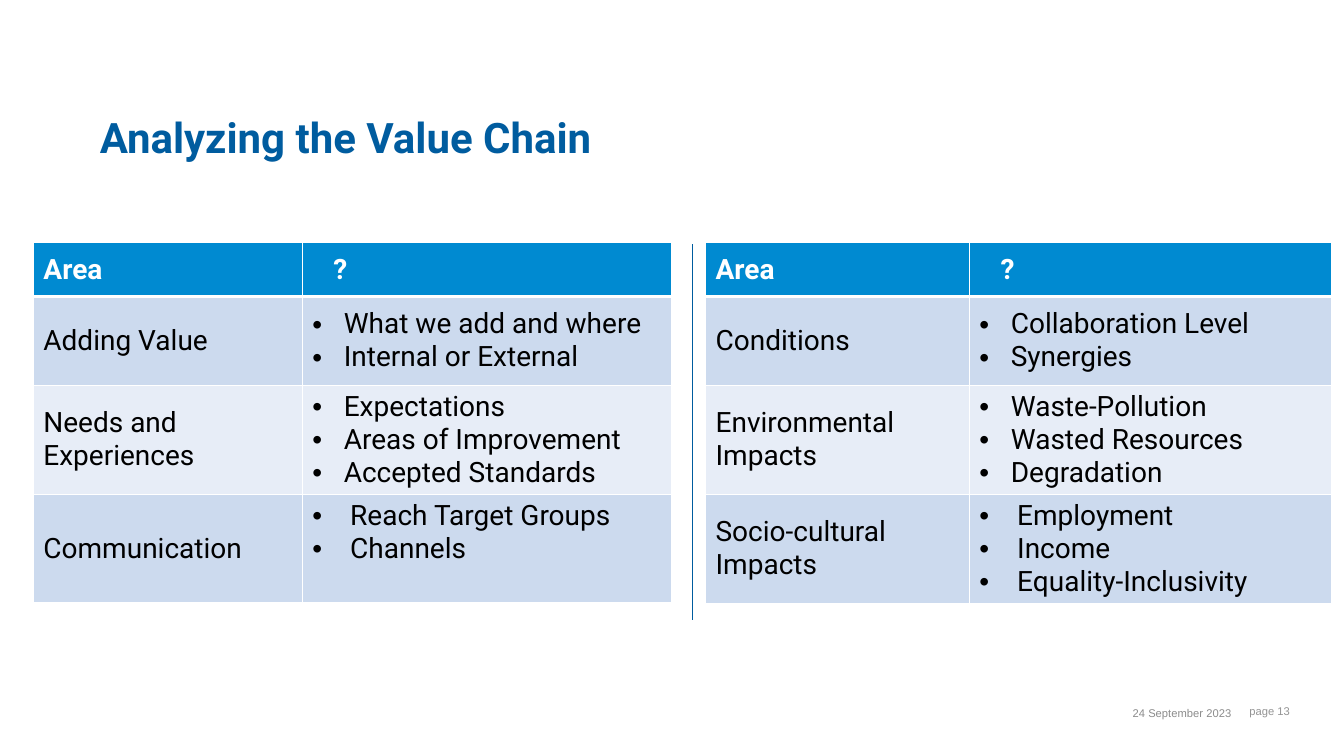
from dataclasses import dataclass

from lxml import etree
from pptx import Presentation
from pptx.dml.color import RGBColor
from pptx.enum.shapes import MSO_CONNECTOR
from pptx.enum.text import MSO_ANCHOR, MSO_AUTO_SIZE, PP_ALIGN
from pptx.oxml.ns import qn
from pptx.util import Cm, Pt

STRAIGHT = MSO_CONNECTOR.STRAIGHT
TOP, MIDDLE = MSO_ANCHOR.TOP, MSO_ANCHOR.MIDDLE
LEFT, CENTER, RIGHT = PP_ALIGN.LEFT, PP_ALIGN.CENTER, PP_ALIGN.RIGHT
NO_AUTOFIT = MSO_AUTO_SIZE.NONE

TITLE_ONLY = 5
NAVY, BLUE, WHITE, BLACK = "005C9F", "008AD1", "FFFFFF", "000000"
BANDS = ("CCDAEE", "E7EDF7")
TABLE_TOP = 6.12
ROW_HEIGHTS = (1.35, 2.24, 2.74, 2.74)
QUESTION_INDENT = 0.53

TITLE_FORMAT = {"name": "Roboto", "size": Pt(30), "bold": True, "color": NAVY}
HEADER_FORMAT = {"name": "Roboto", "size": Pt(20), "bold": True, "color": WHITE}
BODY_FORMAT = {**HEADER_FORMAT, "bold": False, "color": BLACK}
DATE_FORMAT = {"name": "Arial", "size": Pt(8), "bold": False, "color": "8C8C8C"}
PAGE_FORMAT = {**DATE_FORMAT, "color": "949494"}


@dataclass
class AreaRow:
    area: str
    points: list[str]
    indent: float = 0.79
    anchor: MSO_ANCHOR = MIDDLE


@dataclass
class AreaTable:
    left: float
    column_widths: tuple[float, float]
    rows: list[AreaRow]


@dataclass
class FooterText:
    text: str
    box: tuple[float, float, float, float]
    alignment: PP_ALIGN
    text_format: dict


AREA_TABLES = [
    AreaTable(0.84, (6.78, 9.3), [
        AreaRow("Adding Value", ["What we add and where", "Internal or External"]),
        AreaRow("Needs and Experiences",
                ["Expectations", "Areas of Improvement", "Accepted Standards"]),
        AreaRow("Communication", ["Reach Target Groups", "Channels"], 0.95, TOP),
    ]),
    AreaTable(17.78, (6.65, 9.12), [
        AreaRow("Conditions", ["Collaboration Level", "Synergies"]),
        AreaRow("Environmental Impacts",
                ["Waste-Pollution", "Wasted Resources", "Degradation"]),
        AreaRow("Socio-cultural Impacts",
                ["Employment", "Income", "Equality-Inclusivity"], 0.95),
    ]),
]
FOOTERS = [
    FooterText("24 September 2023", (28.04, 17.45, 3.5, 1.02), CENTER, DATE_FORMAT),
    FooterText("page 13", (29.97, 17.4, 2.79, 1.02), RIGHT, PAGE_FORMAT),
]


def color(hex_value: str) -> RGBColor:
    return RGBColor.from_string(hex_value)


def write_run(paragraph, text: str, text_format: dict) -> None:
    font = paragraph.add_run().font
    paragraph.runs[0].text = text
    for attribute, value in text_format.items():
        if attribute == "color":
            font.color.rgb = color(value)
        else:
            setattr(font, attribute, value)


def indent_paragraph(paragraph, indent: float, bullet: bool) -> None:
    properties = paragraph._p.get_or_add_pPr()
    properties.set("marL", str(Cm(indent)))
    properties.set("indent", str(-Cm(indent) if bullet else 0))
    if bullet:
        etree.SubElement(properties, qn("a:buFont")).set("typeface", "Arial")
        etree.SubElement(properties, qn("a:buChar")).set("char", "•")


def add_borders(cell, top: float, bottom: float) -> None:
    properties = cell._tc.get_or_add_tcPr()
    for side, width in {"L": 1, "R": 1, "T": top, "B": bottom}.items():
        line = etree.SubElement(properties, qn(f"a:ln{side}"), w=str(Pt(width)))
        fill = etree.SubElement(line, qn("a:solidFill"))
        etree.SubElement(fill, qn("a:srgbClr"), val=WHITE)


def fill_cell(cell, lines: list[str], text_format: dict, fill: str,
              indent: float = 0, bullet: bool = False, anchor=MIDDLE) -> None:
    cell.fill.solid()
    cell.fill.fore_color.rgb = color(fill)
    cell.vertical_anchor = anchor
    for number, line in enumerate(lines):
        frame = cell.text_frame
        paragraph = frame.add_paragraph() if number else frame.paragraphs[0]
        indent_paragraph(paragraph, indent, bullet)
        write_run(paragraph, line, text_format)


def add_area_table(slide, area_table: AreaTable) -> None:
    table = slide.shapes.add_table(
        len(ROW_HEIGHTS), 2, Cm(area_table.left), Cm(TABLE_TOP),
        Cm(sum(area_table.column_widths)), Cm(sum(ROW_HEIGHTS))).table
    for column, width in zip(table.columns, area_table.column_widths):
        column.width = Cm(width)
    for number, (row, height) in enumerate(zip(table.rows, ROW_HEIGHTS)):
        row.height = Cm(height)
        for cell in row.cells:
            add_borders(cell, 3 if number == 1 else 1, 3 if number == 0 else 1)

    fill_cell(table.cell(0, 0), ["Area"], HEADER_FORMAT, BLUE)
    fill_cell(table.cell(0, 1), ["?"], HEADER_FORMAT, BLUE, QUESTION_INDENT)
    for number, row in enumerate(area_table.rows):
        band = BANDS[number % 2]
        fill_cell(table.cell(number + 1, 0), [row.area], BODY_FORMAT, band)
        fill_cell(table.cell(number + 1, 1), row.points, BODY_FORMAT, band,
                  row.indent, True, row.anchor)


def add_title(slide, text: str) -> None:
    title = slide.shapes.title
    title.left, title.top, title.width, title.height = map(Cm, (2.26, 2.82, 27.94, 1.4))
    frame = title.text_frame
    frame.auto_size = NO_AUTOFIT
    frame.vertical_anchor = MIDDLE
    paragraph = frame.paragraphs[0]
    paragraph.alignment = LEFT
    paragraph.line_spacing = 0.9
    write_run(paragraph, text, TITLE_FORMAT)


def add_divider(slide) -> None:
    divider = slide.shapes.add_connector(
        STRAIGHT, Cm(17.45), Cm(6.15), Cm(17.45), Cm(15.62))
    divider.line.color.rgb = color(NAVY)
    divider.line.width = Pt(0.5)
    etree.SubElement(divider._element.spPr, qn("a:effectLst"))


def add_footer(slide, footer: FooterText) -> None:
    frame = slide.shapes.add_textbox(*map(Cm, footer.box)).text_frame
    frame.word_wrap = True
    frame.vertical_anchor = MIDDLE
    frame.paragraphs[0].alignment = footer.alignment
    write_run(frame.paragraphs[0], footer.text, footer.text_format)


def main() -> None:
    presentation = Presentation()
    presentation.slide_width, presentation.slide_height = Cm(33.87), Cm(19.05)
    slide = presentation.slides.add_slide(presentation.slide_layouts[TITLE_ONLY])

    # Title and divider
    add_title(slide, "Analyzing the Value Chain")
    add_divider(slide)

    # Value chain tables
    for area_table in AREA_TABLES:
        add_area_table(slide, area_table)

    # Date and page number
    for footer in FOOTERS:
        add_footer(slide, footer)

    presentation.save("out.pptx")


if __name__ == "__main__":
    main()
